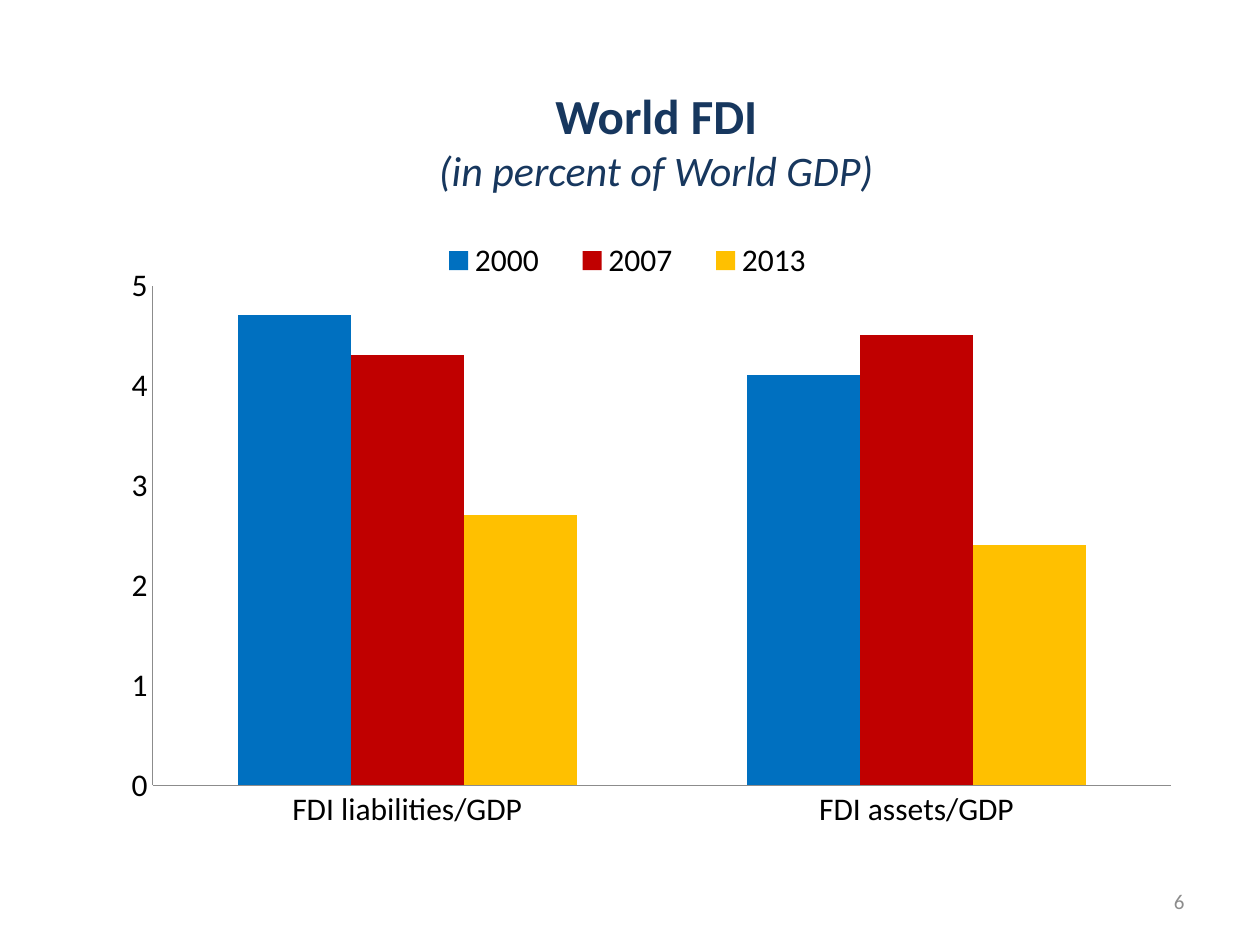
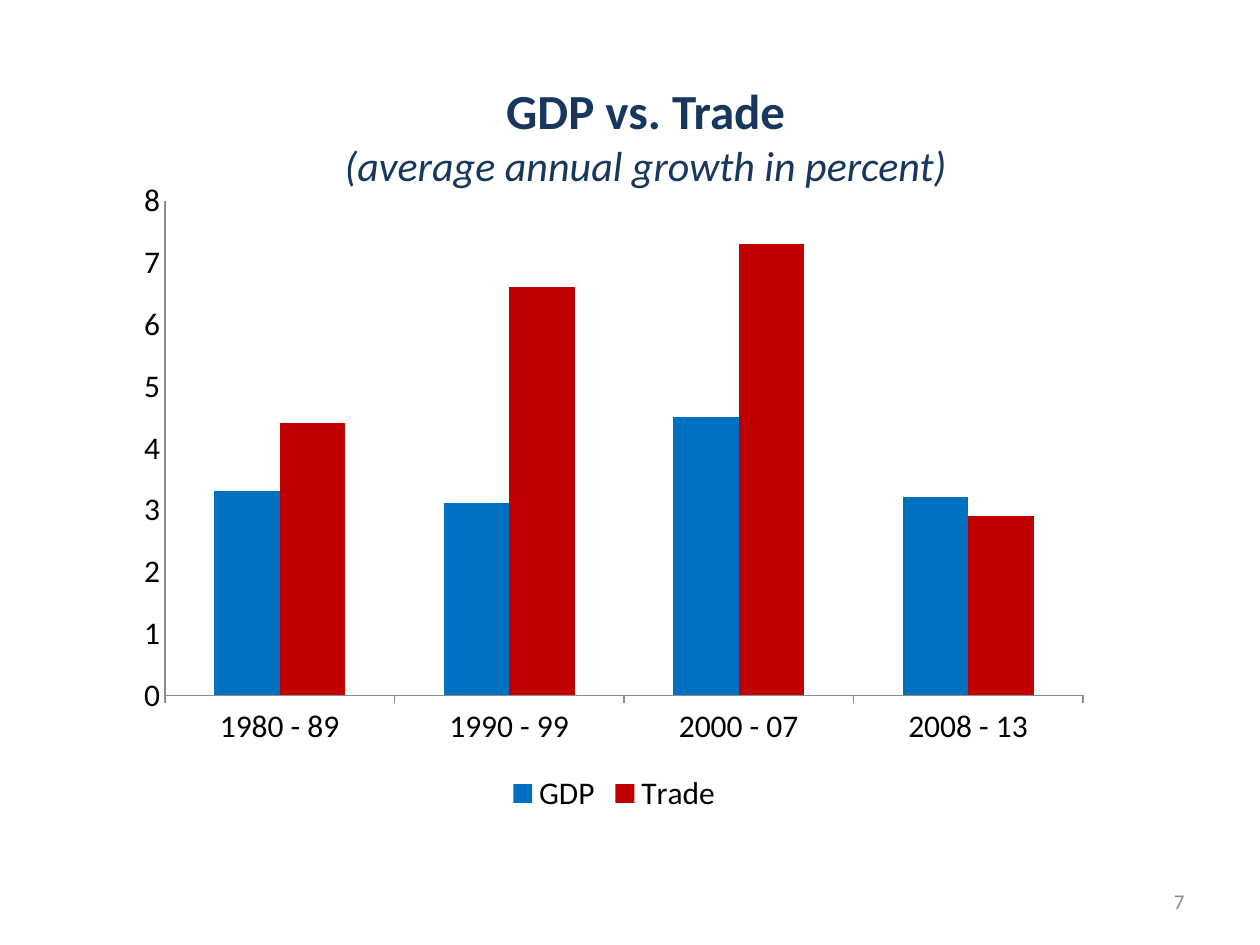
from lxml import etree
from pptx import Presentation
from pptx.chart.data import CategoryChartData
from pptx.dml.color import RGBColor
from pptx.enum.chart import XL_CHART_TYPE as ChartType
from pptx.enum.chart import XL_LEGEND_POSITION as LegendPosition
from pptx.enum.chart import XL_TICK_MARK as TickMark
from pptx.enum.text import MSO_ANCHOR as Anchor
from pptx.enum.text import PP_ALIGN as Align
from pptx.oxml import parse_xml
from pptx.oxml.ns import nsdecls, qn
from pptx.util import Pt

FONT = "Calibri"
NAVY, GRAY, BLACK = "17375E", "8C8C8C", "000000"
SERIES_COLORS = ["0070C0", "C00000", "FFC000"]


def rgb(hex_color):
    return RGBColor.from_string(hex_color)


def set_layout(element, x, y, width, height, inner=False):
    """Place a plot area or legend by fractions of the chart's size."""
    for old_layout in element.findall(qn("c:layout")):
        element.remove(old_layout)
    layout = parse_xml(f"<c:layout {nsdecls('c')}><c:manualLayout/></c:layout>")
    settings = [("layoutTarget", "inner")] if inner else []
    settings += [("xMode", "edge"), ("yMode", "edge"),
                 ("x", x), ("y", y), ("w", width), ("h", height)]
    for name, value in settings:
        etree.SubElement(layout[0], qn(f"c:{name}")).set("val", str(value))
    position = 0 if inner else 1  # a legend's layout follows its legendPos
    element.insert(position, layout)


charts = [
    dict(number=6, title="World FDI", subtitle="(in percent of World GDP)",
         title_box=(195, 45.5, 360, 70.5), chart_box=(48, 102, 654, 408),
         categories=["FDI liabilities/GDP", "FDI assets/GDP"],
         series={"2000": [4.7, 4.1], "2007": [4.3, 4.5], "2013": [2.7, 2.4]},
         maximum=5, tick=TickMark.NONE, legend=LegendPosition.RIGHT,
         plot_layout=(0.06, 0.15, 0.89, 0.7), legend_layout=(0.29, 0.07, 0.37, 0.09)),
    dict(number=7, title="GDP vs. Trade", subtitle="(average annual growth in percent)",
         title_box=(156, 42.5, 426, 70.5), chart_box=(72, 96, 558, 372),
         categories=["1980 - 89", "1990 - 99", "2000 - 07", "2008 - 13"],
         series={"GDP": [3.3, 3.1, 4.5, 3.2], "Trade": [4.4, 6.6, 7.3, 2.9]},
         maximum=8, tick=TickMark.OUTSIDE, legend=LegendPosition.BOTTOM,
         plot_layout=(0.04, 0.05, 0.94, 0.76), legend_layout=None),
]

presentation = Presentation()
presentation.slide_width, presentation.slide_height = Pt(720), Pt(540)

for content in charts:
    slide = presentation.slides.add_slide(presentation.slide_layouts[6])

    # Slide number
    number_frame = slide.shapes.add_textbox(Pt(516), Pt(500.5), Pt(168), Pt(28.75)).text_frame
    number_frame.word_wrap = True
    number_frame.vertical_anchor = Anchor.MIDDLE
    paragraph = number_frame.paragraphs[0]
    paragraph.text = str(content["number"])
    paragraph.alignment = Align.RIGHT
    paragraph.font.name, paragraph.font.size = FONT, Pt(12)
    paragraph.font.color.rgb = rgb(GRAY)

    # Column chart
    data = CategoryChartData()
    data.categories = content["categories"]
    for name, values in content["series"].items():
        data.add_series(name, values)
    chart = slide.shapes.add_chart(
        ChartType.COLUMN_CLUSTERED, *map(Pt, content["chart_box"]), data).chart
    chart.has_title = False
    chart.font.name, chart.font.size = FONT, Pt(18)
    chart.font.color.rgb = rgb(BLACK)

    plot = chart.plots[0]
    plot.gap_width, plot.overlap = 150, 0
    plot.vary_by_categories = False
    for series, color in zip(plot.series, SERIES_COLORS):
        series.format.fill.solid()
        series.format.fill.fore_color.rgb = rgb(color)

    for axis in (chart.category_axis, chart.value_axis):
        axis.has_major_gridlines = False
        axis.major_tick_mark = axis.minor_tick_mark = TickMark.NONE
        axis.format.line.color.rgb = rgb(GRAY)
        axis.format.line.width = Pt(0.75)
    chart.category_axis.major_tick_mark = content["tick"]
    value_axis = chart.value_axis
    value_axis.minimum_scale, value_axis.maximum_scale = 0, content["maximum"]
    value_axis.major_unit = 1
    value_axis.tick_labels.number_format = "0"
    value_axis.tick_labels.number_format_is_linked = False

    chart.has_legend = True
    chart.legend.position = content["legend"]
    chart.legend.include_in_layout = False
    chart.legend.font.size = Pt(18)
    chart_xml = chart.element.find(qn("c:chart"))
    set_layout(chart_xml.find(qn("c:plotArea")), *content["plot_layout"], inner=True)
    if content["legend_layout"]:
        set_layout(chart_xml.find(qn("c:legend")), *content["legend_layout"])

    # Title with an italic subtitle
    title_frame = slide.shapes.add_textbox(*map(Pt, content["title_box"])).text_frame
    title_frame.word_wrap = True
    title, subtitle = title_frame.paragraphs[0], title_frame.add_paragraph()
    title.text, subtitle.text = content["title"], content["subtitle"]
    title.font.size, title.font.bold = Pt(28), True
    subtitle.font.size, subtitle.font.italic = Pt(24), True
    for paragraph in (title, subtitle):
        paragraph.alignment = Align.CENTER
        paragraph.font.name = FONT
        paragraph.font.color.rgb = rgb(NAVY)

presentation.save("out.pptx")
